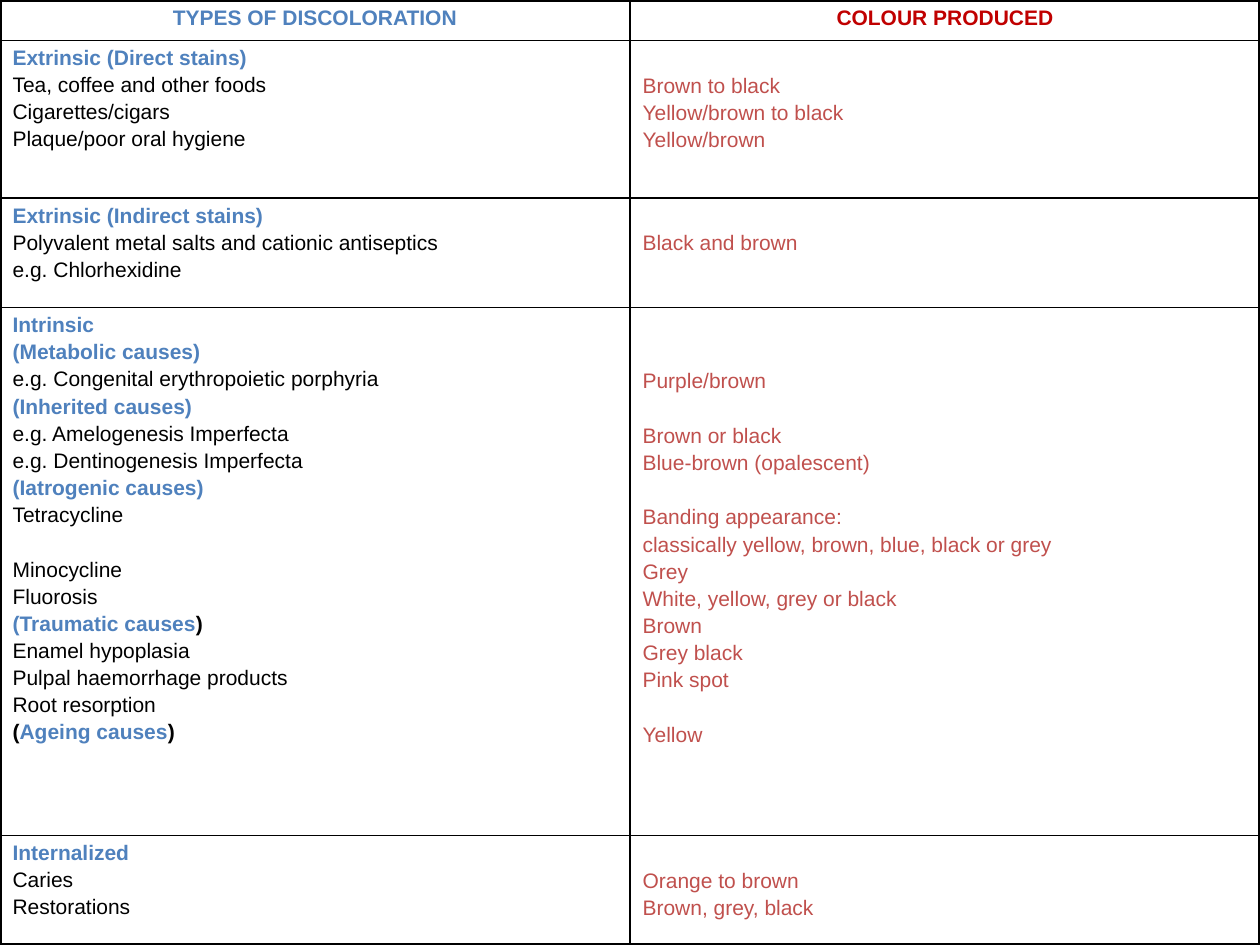
import pptx
import pptx.dml.color
import pptx.enum.text
import pptx.oxml
import pptx.oxml.ns
import pptx.util
from pptx.util import Inches, Pt

BLUE = pptx.dml.color.RGBColor(0x4F, 0x81, 0xBD)
DARK_RED = pptx.dml.color.RGBColor(0xC0, 0x00, 0x00)
RED = pptx.dml.color.RGBColor(0xC0, 0x50, 0x4D)
BLACK = pptx.dml.color.RGBColor(0x00, 0x00, 0x00)

HEADERS = [("TYPES OF DISCOLORATION", BLUE), ("COLOUR PRODUCED", DARK_RED)]


def heading(text, before="", after=""):
    pieces = [(before, BLACK, True), (text, BLUE, True), (after, BLACK, True)]
    return [piece for piece in pieces if piece[0]]


SECTIONS = [
    [
        (heading("Extrinsic (Direct stains)"), None),
        ("Tea, coffee and other foods", "Brown to black"),
        ("Cigarettes/cigars", "Yellow/brown to black"),
        ("Plaque/poor oral hygiene", "Yellow/brown"),
    ],
    [
        (heading("Extrinsic (Indirect stains)"), None),
        ("Polyvalent metal salts and cationic antiseptics", "Black and brown"),
        ("e.g. Chlorhexidine", None),
    ],
    [
        (heading("Intrinsic"), None),
        (heading("(Metabolic causes)"), None),
        ("e.g. Congenital erythropoietic porphyria", "Purple/brown"),
        (heading("(Inherited causes)"), None),
        ("e.g. Amelogenesis Imperfecta", "Brown or black"),
        ("e.g. Dentinogenesis Imperfecta", "Blue-brown (opalescent)"),
        (heading("(Iatrogenic causes)"), None),
        ("Tetracycline", "Banding appearance:"),
        (None, "classically yellow, brown, blue, black or grey"),
        ("Minocycline", "Grey"),
        ("Fluorosis", "White, yellow, grey or black"),
        (heading("(Traumatic causes", after=")"), "Brown"),
        ("Enamel hypoplasia", "Grey black"),
        ("Pulpal haemorrhage products", "Pink spot"),
        ("Root resorption", None),
        (heading("Ageing causes", before="(", after=")"), "Yellow"),
    ],
    [
        (heading("Internalized"), None),
        ("Caries", "Orange to brown"),
        ("Restorations", "Brown, grey, black"),
    ],
]

ROW_HEIGHTS = [0.32, 1.25, 0.87, 4.19, 0.87]
COLUMN_WIDTH = 5
LINE_GAP = 2.05
LINE_PITCH = 15.85
CELL_TOP = 0.05
OUTER_LINE, INNER_LINE = 2.25, 1


def add_text(paragraph, text, color=BLACK, bold=False, size=12, font="Arial"):
    run = paragraph.add_run()
    run.text = text
    run.font.name = font
    run.font.size = Pt(size)
    run.font.bold = bold
    run.font.color.rgb = color


def fill_cell(cell, lines, color):
    paragraph = None
    skipped = 0
    for line in lines:
        if line is None:
            skipped += 1
            continue
        if paragraph is None:
            paragraph = cell.text_frame.paragraphs[0]
            cell.margin_top = Inches(CELL_TOP) + Pt(skipped * LINE_PITCH)
        else:
            paragraph = cell.text_frame.add_paragraph()
            paragraph.space_before = Pt(LINE_GAP + skipped * LINE_PITCH)
        skipped = 0
        pieces = [(line, color, False)] if isinstance(line, str) else line
        for text, piece_color, bold in pieces:
            add_text(paragraph, text, color=piece_color, bold=bold)


def set_borders(cell, widths):
    properties = cell._tc.get_or_add_tcPr()
    for index, (side, width) in enumerate(widths.items()):
        properties.insert(index, pptx.oxml.parse_xml(
            f'<a:ln{side} {pptx.oxml.ns.nsdecls("a")} w="{Pt(width)}">'
            f'<a:solidFill><a:srgbClr val="{BLACK}"/></a:solidFill></a:ln{side}>'
        ))


def main():
    presentation = pptx.Presentation()
    presentation.slide_width = Inches(10)
    presentation.slide_height = Inches(7.5)
    slide = presentation.slides.add_slide(presentation.slide_layouts[6])

    row_count, column_count = len(ROW_HEIGHTS), len(HEADERS)
    table = slide.shapes.add_table(
        row_count, column_count, 0, 0,
        Inches(column_count * COLUMN_WIDTH), Inches(sum(ROW_HEIGHTS)),
    ).table
    table.first_row = False
    table.horz_banding = False
    for column in table.columns:
        column.width = Inches(COLUMN_WIDTH)
    for row, height in zip(table.rows, ROW_HEIGHTS):
        row.height = Inches(height)

    for column_index, (text, color) in enumerate(HEADERS):
        cell = table.cell(0, column_index)
        fill_cell(cell, [[(text, color, True)]], color)
        cell.text_frame.paragraphs[0].alignment = pptx.enum.text.PP_ALIGN.CENTER

    for row_index, section in enumerate(SECTIONS, start=1):
        causes, colours = zip(*section)
        fill_cell(table.cell(row_index, 0), causes, BLACK)
        fill_cell(table.cell(row_index, 1), colours, RED)

    for row_index in range(row_count):
        for column_index in range(column_count):
            cell = table.cell(row_index, column_index)
            cell.fill.background()
            on_edge = {
                "L": column_index == 0,
                "R": column_index == column_count - 1,
                "T": row_index == 0,
                "B": row_index == row_count - 1,
            }
            set_borders(cell, {
                side: OUTER_LINE if edge else INNER_LINE
                for side, edge in on_edge.items()
            })

    presentation.save("out.pptx")


if __name__ == "__main__":
    main()
